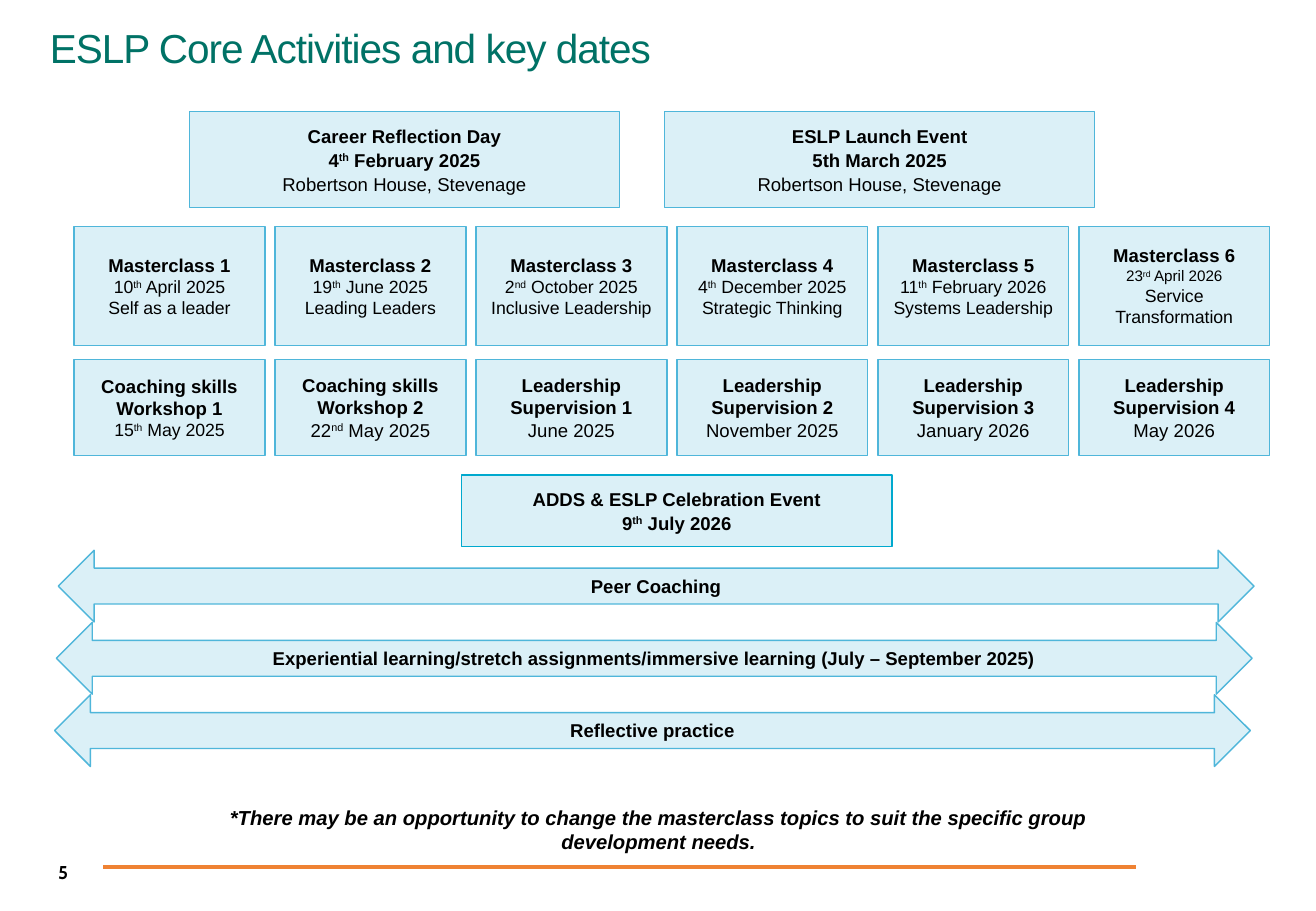
from dataclasses import dataclass

import pptx
import pptx.dml.color
import pptx.enum.shapes
import pptx.enum.text
import pptx.oxml.ns
import pptx.util
from lxml import etree

SHAPE = pptx.enum.shapes.MSO_SHAPE
ALIGN = pptx.enum.text.PP_ALIGN
ANCHOR = pptx.enum.text.MSO_ANCHOR
Pt = pptx.util.Pt
qn = pptx.oxml.ns.qn


@dataclass(frozen=True)
class Theme:
    font: str = "Arial"
    number_font: str = "Cabin"
    title: str = "007266"
    text: str = "000000"
    blue: str = "4FB6DA"
    teal: str = "00A9CE"
    orange: str = "EF8233"
    fill_alpha: int = 20
    title_size: float = 24
    note_size: float = 12
    head_size: float = 11
    body_size: float = 10.5
    small_size: float = 9


THEME = Theme()


@dataclass(frozen=True)
class Area:
    """Left, top, width and height as percentages of the slide."""
    x: float
    y: float
    w: float
    h: float


@dataclass(frozen=True)
class Line:
    """One paragraph; text between carets is superscript."""
    text: str
    size: float = THEME.head_size
    bold: bool = False
    italic: bool = False


@dataclass(frozen=True)
class Block:
    area: Area
    lines: list[Line]
    kind: int = SHAPE.RECTANGLE
    outline: str = THEME.blue
    weight: float = 0.85
    event: bool = False


def head(text: str) -> Line:
    return Line(text, bold=True)


def body(text: str) -> Line:
    return Line(text, THEME.body_size)


# Event boxes
VENUE = Line("Robertson House, Stevenage")
EVENTS = [
    Block(Area(14.4, 12.27, 32.69, 10.53),
          [head("Career Reflection Day"), head("4^th^ February 2025"), VENUE],
          weight=0.75, event=True),
    Block(Area(50.51, 12.27, 32.69, 10.53),
          [head("ESLP Launch Event"), head("5th March 2025"), VENUE],
          weight=0.75, event=True),
    Block(Area(35.09, 52.13, 32.69, 7.87),
          [head("ADDS & ESLP Celebration Event"), head("9^th^ July 2026")],
          outline=THEME.teal, weight=0.75, event=True),
]

# Six-column grid of masterclasses and development sessions
FIRST_COLUMN, COLUMN_STEP, COLUMN_WIDTH = 5.63, 15.27, 14.5
MASTERCLASSES = [
    [head(f"Masterclass {n}"), date, body(topic)]
    for n, (date, topic) in enumerate([
        (body("10^th^ April 2025"), "Self as a leader"),
        (body("19^th^ June 2025"), "Leading Leaders"),
        (body("2^nd^ October 2025"), "Inclusive Leadership"),
        (body("4^th^ December 2025"), "Strategic Thinking"),
        (body("11^th^ February 2026"), "Systems Leadership"),
        (Line("23^rd^ April 2026", THEME.small_size), "Service Transformation"),
    ], 1)
]
WORKSHOPS = [
    [head("Coaching skills"), head(f"Workshop {n}"), date]
    for n, date in enumerate([body("15^th^ May 2025"), Line("22^nd^ May 2025")], 1)
]
SUPERVISIONS = [
    [head(f"Leadership Supervision {n}"), Line(date)]
    for n, date in enumerate(["June 2025", "November 2025", "January 2026", "May 2026"], 1)
]
SESSIONS = [
    Block(Area(FIRST_COLUMN + col * COLUMN_STEP, top, COLUMN_WIDTH, height), lines)
    for top, height, row in [(24.85, 13.07, MASTERCLASSES),
                             (39.47, 10.53, WORKSHOPS + SUPERVISIONS)]
    for col, lines in enumerate(row)
]

# Arrows for activities that run throughout
ARROWS = [
    Block(Area(4.43 - 0.14 * i, 60.4 + 7.93 * i, 90.86, 7.87), [head(text)],
          kind=SHAPE.LEFT_RIGHT_ARROW)
    for i, text in enumerate([
        "Peer Coaching",
        "Experiential learning/stretch assignments/immersive learning (July – September 2025)",
        "Reflective practice",
    ])
]


def rgb(value: str) -> pptx.dml.color.RGBColor:
    return pptx.dml.color.RGBColor.from_string(value)


def place(prs, area: Area) -> tuple[int, int, int, int]:
    w, h = prs.slide_width / 100, prs.slide_height / 100
    return int(area.x * w), int(area.y * h), int(area.w * w), int(area.h * h)


def write(tf, lines: list[Line], align: int, font: str = THEME.font,
          color: str = THEME.text, space: float = 0) -> None:
    tf.word_wrap = True
    for i, line in enumerate(lines):
        p = tf.add_paragraph() if i else tf.paragraphs[0]
        p.alignment = align
        p.space_before = Pt(space if i else 0)
        for j, part in enumerate(line.text.split("^")):
            r = p.add_run()
            r.text = part
            r.font.name, r.font.size = font, Pt(line.size)
            r.font.bold, r.font.italic = line.bold, line.italic
            r.font.color.rgb = rgb(color)
            if j % 2:
                r.font._element.set("baseline", "30000")


def add_block(prs, s, block: Block) -> None:
    sp = s.shapes.add_shape(block.kind, *place(prs, block.area))
    sp.shadow.inherit = False
    sp.fill.solid()
    sp.fill.fore_color.rgb = rgb(THEME.blue)
    tint = sp._element.spPr.find(f"{qn('a:solidFill')}/{qn('a:srgbClr')}")
    etree.SubElement(tint, qn("a:alpha")).set("val", str(THEME.fill_alpha * 1000))
    sp.line.color.rgb = rgb(block.outline)
    sp.line.width = Pt(block.weight)
    tf = sp.text_frame
    tf.vertical_anchor = ANCHOR.MIDDLE
    if block.event:
        tf.margin_left = tf.margin_right = tf.margin_top = tf.margin_bottom = 0
    write(tf, block.lines, ALIGN.CENTER, space=1 if block.event else 0)


def add_title(prs, s, text: str) -> None:
    sp = s.shapes.title
    sp.left, sp.top, sp.width, sp.height = place(prs, Area(2.86, 1.87, 78.49, 6.67))
    tf = sp.text_frame
    tf.auto_size = pptx.enum.text.MSO_AUTO_SIZE.NONE
    tf.vertical_anchor = ANCHOR.TOP
    write(tf, [Line(text, THEME.title_size)], ALIGN.LEFT, color=THEME.title)
    tf.paragraphs[0].runs[0].font._element.set("spc", "-60")


def add_rule(prs, s) -> None:
    x, y, w, _ = place(prs, Area(7.85, 95.2, 78.49, 0))
    rule = s.shapes.add_connector(pptx.enum.shapes.MSO_CONNECTOR.STRAIGHT, x, y, x + w, y)
    rule.line.color.rgb = rgb(THEME.orange)
    rule.line.width = Pt(2.25)
    etree.SubElement(rule._element.spPr, qn("a:effectLst"))


def main() -> None:
    prs = pptx.Presentation()
    prs.slide_width, prs.slide_height = pptx.util.Inches(10.83), pptx.util.Inches(7.5)
    s = prs.slides.add_slide(prs.slide_layouts[5])
    add_title(prs, s, "ESLP Core Activities and key dates")
    add_rule(prs, s)
    for block in EVENTS + SESSIONS + ARROWS:
        add_block(prs, s, block)

    # Footnote and slide number
    note = s.shapes.add_textbox(*place(prs, Area(12.28, 87.73, 75.53, 6.67)))
    write(note.text_frame, [Line(
        "*There may be an opportunity to change the masterclass topics to suit "
        "the specific group development needs.", THEME.note_size, True, True)], ALIGN.CENTER)
    number = s.shapes.add_textbox(*place(prs, Area(3.51, 93.07, 12.56, 5.33)))
    number.text_frame.vertical_anchor = ANCHOR.MIDDLE
    write(number.text_frame, [head("5")], ALIGN.LEFT, font=THEME.number_font)
    prs.save("out.pptx")


if __name__ == "__main__":
    main()
